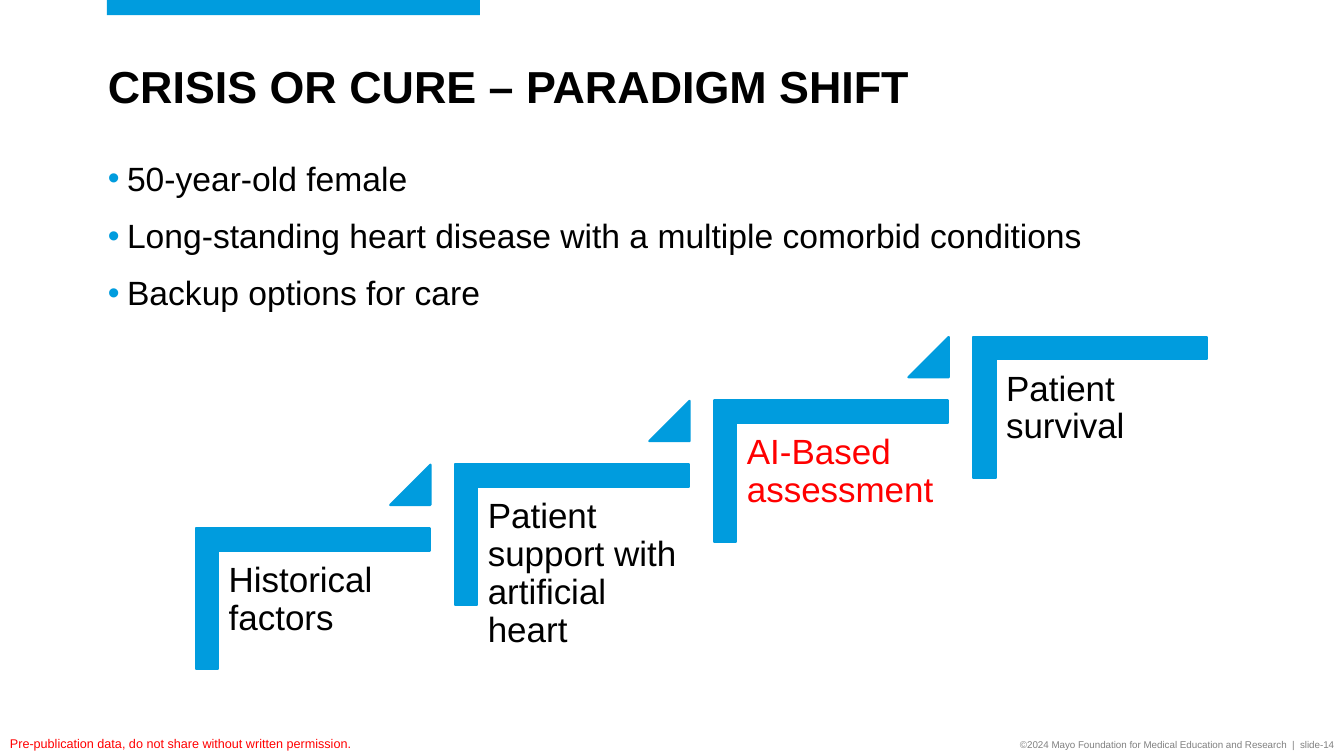
from lxml import etree
from pptx import Presentation
from pptx.dml.color import RGBColor
from pptx.enum.shapes import MSO_SHAPE
from pptx.enum.text import MSO_ANCHOR, PP_ALIGN
from pptx.oxml.ns import qn
from pptx.util import Inches, Pt

COLORS = {"blue": "009CDE", "black": "000000", "red": "FF0000", "gray": "808080"}

deck = Presentation()
deck.slide_width, deck.slide_height = Inches(13.33), Inches(7.5)
page = deck.slides.add_slide(deck.slide_layouts[6])


def add_text(place, lines, size, color="black", insets=(0.1, 0.05, 0.1, 0.05), bold=False):
    box = page.shapes.add_textbox(*[Inches(length) for length in place])
    frame = box.text_frame
    frame.word_wrap = True
    frame.margin_left, frame.margin_top, frame.margin_right, frame.margin_bottom = [
        Inches(inset) for inset in insets]
    for index, line in enumerate(lines):
        para = frame.paragraphs[0] if index == 0 else frame.add_paragraph()
        para.line_spacing = 0.9
        span = para.add_run()
        span.text = line
        span.font.name = "Arial"
        span.font.size = Pt(size)
        span.font.bold = bold
        span.font.color.rgb = RGBColor.from_string(COLORS[color])
    return frame


def add_blue_shape(kind, place, outlined=True):
    shape = page.shapes.add_shape(kind, *[Inches(length) for length in place])
    shape.shadow.inherit = False
    blue = RGBColor.from_string(COLORS["blue"])
    shape.fill.solid()
    shape.fill.fore_color.rgb = blue
    if outlined:
        shape.line.color.rgb = blue
        shape.line.width = Pt(1.5)
    else:
        shape.line.fill.background()
    return shape


# Top bar and title
add_blue_shape(MSO_SHAPE.RECTANGLE, (1.06, 0, 3.7, 0.15), outlined=False)
add_text((1.07, 0.59, 10.42, 0.64), ["CRISIS OR CURE – PARADIGM SHIFT"], 32,
         insets=(0, 0.05, 0, 0.05), bold=True)

# Bulleted case facts
facts = add_text((1.07, 1.61, 11.32, 1.6), [
    "50-year-old female",
    "Long-standing heart disease with a multiple comorbid conditions",
    "Backup options for care",
], 24, insets=(0, 0, 0, 0.05))
for index, para in enumerate(facts.paragraphs):
    if index > 0:
        para.space_before = Pt(15)
    properties = para._p.get_or_add_pPr()
    properties.set("marL", str(Inches(0.19)))
    properties.set("indent", str(-Inches(0.19)))
    bullet_color = etree.SubElement(properties, qn("a:buClr"))
    etree.SubElement(bullet_color, qn("a:srgbClr"), val=COLORS["blue"])
    etree.SubElement(properties, qn("a:buFont"), typeface="Arial")
    etree.SubElement(properties, qn("a:buChar"), char="•")

# Staircase of steps, rising to the right
STEP_RUN, STEP_RISE = 2.57, 1.9 / 3
steps = [
    ("Historical factors", "black"),
    ("Patient support with artificial heart", "black"),
    ("AI-Based assessment", "red"),
    ("Patient survival", "black"),
]
for index, (label, color) in enumerate(steps):
    across, up = index * STEP_RUN, index * STEP_RISE
    corner = add_blue_shape(MSO_SHAPE.CORNER, (2.4 + across, 4.78 - up, 1.4, 2.32))
    corner.rotation = 90
    corner.adjustments[0] = corner.adjustments[1] = 0.16
    add_text((2.17 + across, 5.48 - up, 2.1, 1.84), [label], 25, color, insets=(0.1,) * 4)
    if index < len(steps) - 1:
        triangle = add_blue_shape(MSO_SHAPE.ISOSCELES_TRIANGLE,
                                  (3.87 + across, 4.61 - up, 0.4, 0.4))
        triangle.adjustments[0] = 1

# Footer
notice = add_text((0, 7.25, 3.62, 0.25),
                  ["Pre-publication data, do not share without written permission."], 9, "red")
notice.word_wrap = False
notice.paragraphs[0].line_spacing = 1.0
credit = add_text((9.21, 7.28, 4.12, 0.22),
                  ["©2024 Mayo Foundation for Medical Education and Research  |  slide-14"], 7, "gray")
credit.vertical_anchor = MSO_ANCHOR.MIDDLE
credit.paragraphs[0].alignment = PP_ALIGN.RIGHT
credit.paragraphs[0].line_spacing = 1.0

deck.save("out.pptx")
